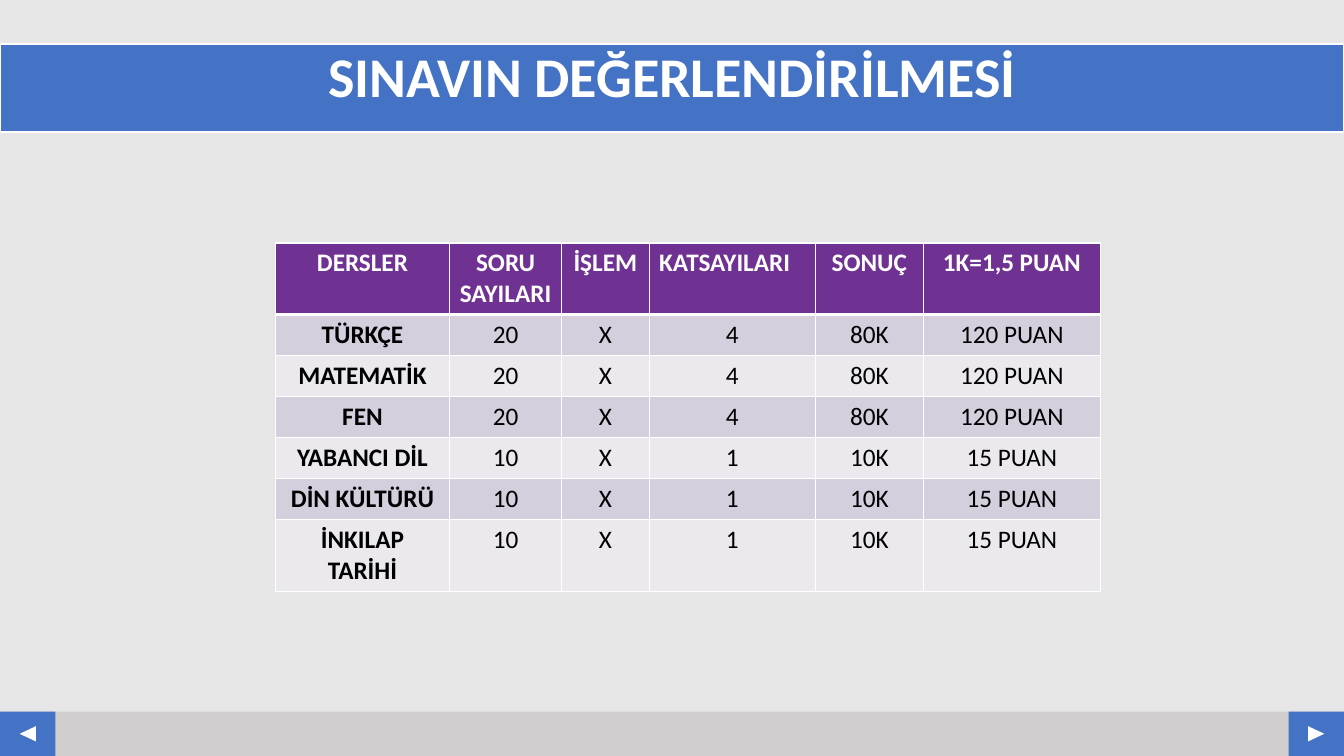
from dataclasses import dataclass

from lxml import etree
from pptx import Presentation
from pptx.dml.color import RGBColor
from pptx.enum.shapes import MSO_SHAPE
from pptx.enum.text import MSO_ANCHOR, MSO_AUTO_SIZE, PP_ALIGN
from pptx.oxml.ns import qn
from pptx.util import Pt

RECT = MSO_SHAPE.RECTANGLE
ARROW = MSO_SHAPE.ISOSCELES_TRIANGLE
LEFT, CENTER = PP_ALIGN.LEFT, PP_ALIGN.CENTER
TOP = MSO_ANCHOR.TOP

FONT = "Calibri"
WHITE, BLACK, BLUE = "FFFFFF", "000000", "4472C4"
GRAY, BACK = "D0CECE", "E7E6E6"
PURPLE, BANDS = "6F3293", ("EBE8EE", "D5CEDC")
WIDE, HIGH = 960, 540
BAR, NAV = 31.7, 39.6

COLS = (124.6, 79.9, 62.6, 118.8, 77, 126.7)
ROW, TALL = 29.3, 51.2
HEAD = ("DERSLER", "SORU SAYILARI", "İŞLEM", "KATSAYILARI", "SONUÇ", "1K=1,5 PUAN")
MAIN = ("20", "X", "4", "80K", "120 PUAN")
SIDE = ("10", "X", "1", "10K", "15 PUAN")
ROWS = [
    HEAD,
    ("TÜRKÇE", *MAIN),
    ("MATEMATİK", *MAIN),
    ("FEN", *MAIN),
    ("YABANCI DİL", *SIDE),
    ("DİN KÜLTÜRÜ", *SIDE),
    ("İNKILAP TARİHİ", *SIDE),
]


@dataclass
class Part:
    kind: int
    left: float
    top: float
    width: float
    height: float
    color: str
    turn: float = 0


def paint(fill, color: str) -> None:
    fill.solid()
    fill.fore_color.rgb = RGBColor.from_string(color)


def write(frame, text: str, size: float, color: str, bold: bool, align) -> None:
    frame.text = text
    para = frame.paragraphs[0]
    para.alignment = align
    font = para.runs[0].font
    font.name, font.size, font.bold = FONT, Pt(size), bold
    paint(font.fill, color)


def draw(slide, part: Part) -> None:
    box = (Pt(n) for n in (part.left, part.top, part.width, part.height))
    shape = slide.shapes.add_shape(part.kind, *box)
    shape.shadow.inherit = False
    shape.rotation = part.turn
    shape.line.fill.background()
    paint(shape.fill, part.color)


def edge(cell, sides: dict[str, float]) -> None:
    """Add white borders ahead of the cell's fill, in schema order."""
    props = cell._tc.get_or_add_tcPr()
    for spot, (side, width) in enumerate(sides.items()):
        line = etree.Element(qn(f"a:ln{side}"), w=str(Pt(width)))
        fill = etree.SubElement(line, qn("a:solidFill"))
        etree.SubElement(fill, qn("a:srgbClr"), val=WHITE)
        props.insert(spot, line)


def add_title(slide) -> None:
    title = slide.shapes.title
    title.left, title.top = Pt(0), Pt(31.7)
    title.width, title.height = Pt(WIDE), Pt(62.6)
    paint(title.fill, BLUE)
    paint(title.line.fill, WHITE)
    title.line.width = Pt(1.5)
    frame = title.text_frame
    frame.auto_size = MSO_AUTO_SIZE.NONE
    frame.vertical_anchor = TOP
    write(frame, "SINAVIN DEĞERLENDİRİLMESİ", 40, WHITE, True, CENTER)
    frame.paragraphs[0].line_spacing = 0.9


def add_scores(slide) -> None:
    last = len(ROWS) - 1
    sizes = [TALL if r in (0, last) else ROW for r in range(len(ROWS))]
    table = slide.shapes.add_table(
        len(ROWS), len(COLS), Pt(196.6), Pt(173.5), Pt(sum(COLS)), Pt(sum(sizes))
    ).table
    for col, width in zip(table.columns, COLS):
        col.width = Pt(width)
    for r, texts in enumerate(ROWS):
        head = r == 0
        table.rows[r].height = Pt(sizes[r])
        for c, text in enumerate(texts):
            cell = table.cell(r, c)
            align = LEFT if head and c == 3 else CENTER
            ink = WHITE if head else BLACK
            write(cell.text_frame, text, 18, ink, head or c == 0, align)
            paint(cell.fill, PURPLE if head else BANDS[r % 2])
            edge(cell, {"L": 1, "R": 1, "T": 3 if r == 1 else 1, "B": 3 if head else 1})


def main() -> None:
    deck = Presentation()
    deck.slide_width, deck.slide_height = Pt(WIDE), Pt(HIGH)
    slide = deck.slides.add_slide(deck.slide_layouts[5])
    paint(slide.background.fill, BACK)

    # Footer bar with a button at each end
    foot = HIGH - BAR
    draw(slide, Part(RECT, 0, foot, WIDE, BAR, GRAY))
    for left, turn in ((0, 270), (WIDE - NAV, 90)):
        draw(slide, Part(RECT, left, foot, NAV, BAR, BLUE))
        draw(slide, Part(ARROW, left + 14.4, foot + 10.1, 10.8, 11.5, WHITE, turn))

    # Heading and score table
    add_title(slide)
    add_scores(slide)
    deck.save("out.pptx")


if __name__ == "__main__":
    main()
